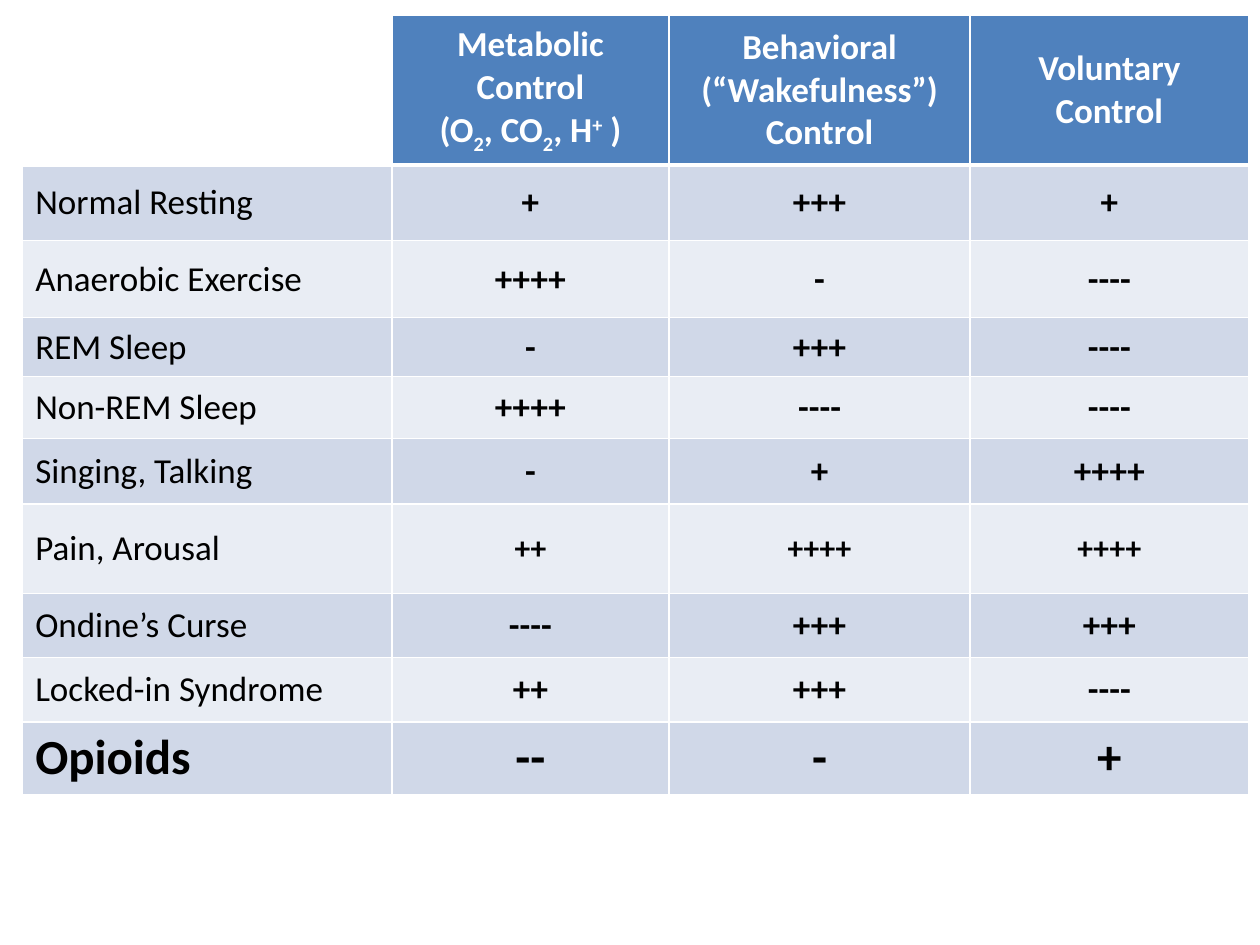
"""Build a slide with a table of breathing control by condition."""
from lxml import etree
from pptx import Presentation
from pptx.dml.color import RGBColor
from pptx.enum.text import MSO_ANCHOR, PP_ALIGN
from pptx.oxml.ns import qn
from pptx.util import Inches, Pt

WHITE, BLACK, BLUE = "FFFFFF", "000000", "4F81BD"
BANDS = ["D0D8E8", "E9EDF4"]
SUB, SUP = -25000, 30000

HEADERS = [
    [["Metabolic Control"],
     ["(O", ("2", SUB), ", CO", ("2", SUB), ", H", ("+", SUP), " )"]],
    [["Behavioral (“Wakefulness”) Control"]],
    [["Voluntary Control"]],
]
ROWS = [
    ("Normal Resting", "+", "+++", "+"),
    ("Anaerobic Exercise", "++++", "-", "----"),
    ("REM Sleep", "-", "+++", "----"),
    ("Non-REM Sleep", "++++", "----", "----"),
    ("Singing, Talking", "-", "+", "++++"),
    ("Pain, Arousal", "++", "++++", "++++"),
    ("Ondine’s Curse", "----", "+++", "+++"),
    ("Locked-in Syndrome", "++", "+++", "----"),
    ("Opioids", "--", "-", "+"),
]
COL_WIDTHS = [2.93, 2.2, 2.39, 2.21]
ROW_HEIGHTS = [1.19, 0.6, 0.61, 0.47, 0.49, 0.52, 0.71, 0.51, 0.51, 0.51]


def rgb(value):
    return RGBColor.from_string(value)


def set_borders(cell, top=1, bottom=1):
    tcPr = cell._tc.get_or_add_tcPr()
    widths = {"a:lnL": 1, "a:lnR": 1, "a:lnT": top, "a:lnB": bottom}
    for i, (tag, width) in enumerate(widths.items()):
        ln = etree.Element(qn(tag), w=str(Pt(width)))
        fill = etree.SubElement(ln, qn("a:solidFill"))
        etree.SubElement(fill, qn("a:srgbClr"), val=WHITE)
        tcPr.insert(i, ln)


def write(cell, paragraphs, size=20, color=BLACK, bold=True, align=PP_ALIGN.CENTER):
    tf = cell.text_frame
    for i, parts in enumerate(paragraphs):
        p = tf.add_paragraph() if i else tf.paragraphs[0]
        p.alignment = align
        for part in parts:
            text, baseline = (part, 0) if isinstance(part, str) else part
            r = p.add_run()
            r.text = text
            r.font.name, r.font.size, r.font.bold = "Calibri", Pt(size), bold
            r.font.color.rgb = rgb(color)
            if baseline:
                r.font._element.set("baseline", str(baseline))


def style(cell, fill=None, **borders):
    cell.vertical_anchor = MSO_ANCHOR.MIDDLE
    if fill:
        cell.fill.solid()
        cell.fill.fore_color.rgb = rgb(fill)
    else:
        cell.fill.background()
    set_borders(cell, **borders)


def main():
    prs = Presentation()
    prs.slide_width, prs.slide_height = Inches(10), Inches(7.5)
    s = prs.slides.add_slide(prs.slide_layouts[6])
    table = s.shapes.add_table(
        len(ROW_HEIGHTS), len(COL_WIDTHS), Inches(0.18), Inches(0.12),
        Inches(sum(COL_WIDTHS)), Inches(sum(ROW_HEIGHTS))).table
    for col, width in zip(table.columns, COL_WIDTHS):
        col.width = Inches(width)
    for row, height in zip(table.rows, ROW_HEIGHTS):
        row.height = Inches(height)

    style(table.cell(0, 0), bottom=3)
    for c, paragraphs in enumerate(HEADERS, 1):
        cell = table.cell(0, c)
        style(cell, BLUE, bottom=3)
        write(cell, paragraphs, color=WHITE)

    for i, (label, *marks) in enumerate(ROWS):
        top = 1 if i else 3
        last = label == "Opioids"
        mark_size = {"Pain, Arousal": 18, "Opioids": 28}.get(label, 20)
        for c, text in enumerate([label, *marks]):
            cell = table.cell(i + 1, c)
            style(cell, BANDS[i % 2], top=top)
            if c:
                write(cell, [[text]], size=mark_size)
            else:
                write(cell, [[text]], size=28 if last else 20, bold=last,
                      align=PP_ALIGN.LEFT)
    prs.save("out.pptx")


if __name__ == "__main__":
    main()
